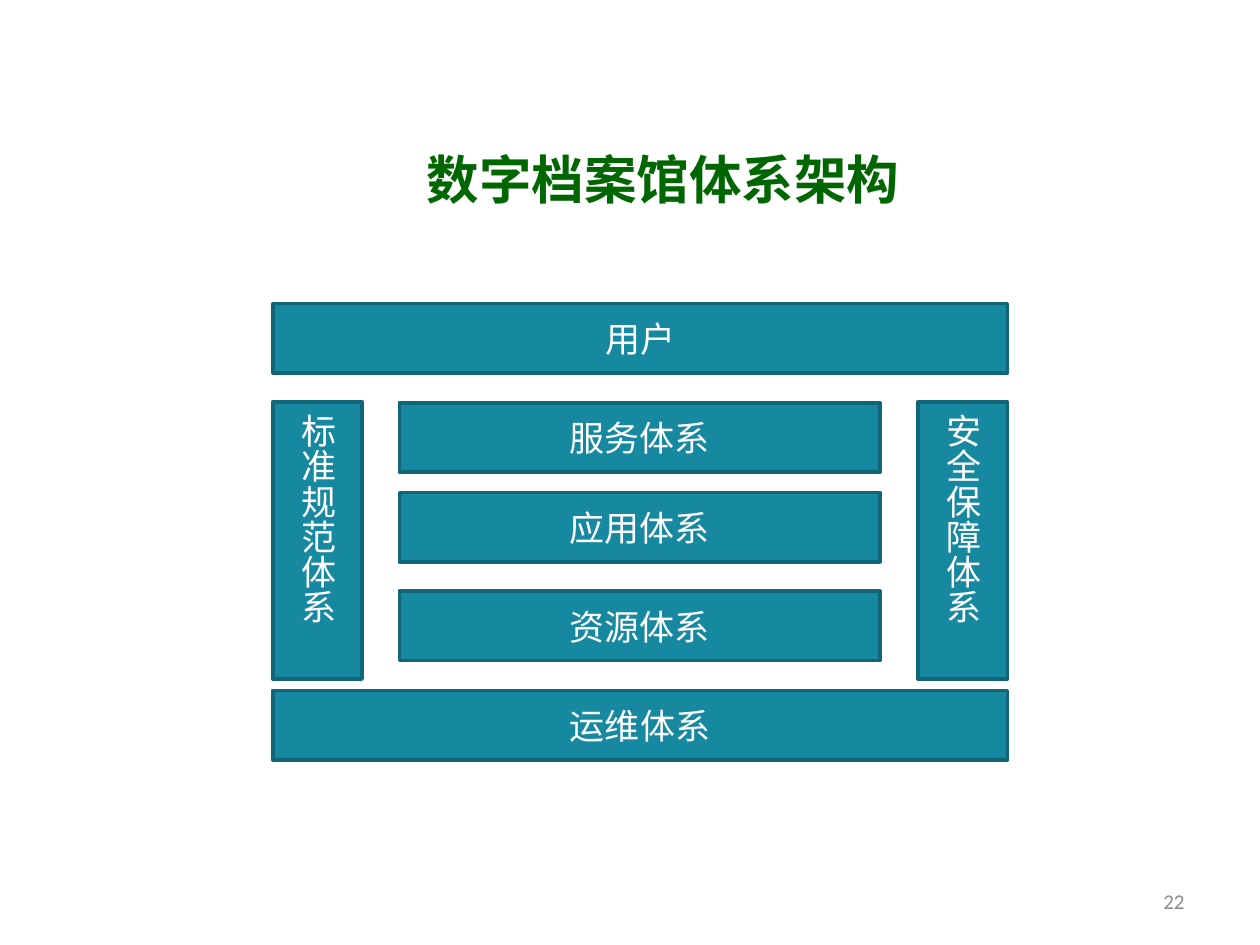
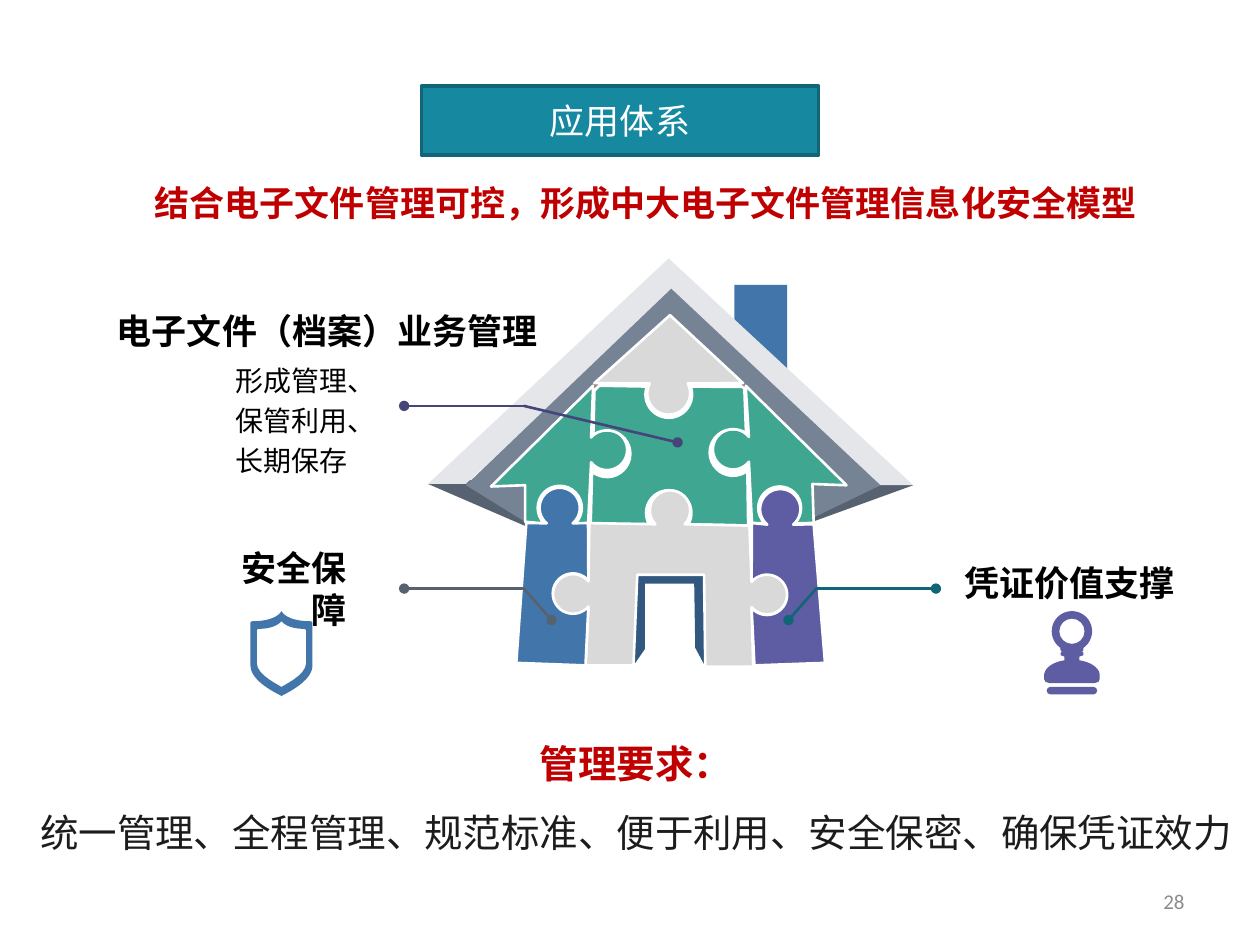
from math import ceil, cos, radians, sin, tan

from lxml import etree
from pptx import Presentation
from pptx.dml.color import RGBColor
from pptx.enum.shapes import MSO_CONNECTOR, MSO_SHAPE
from pptx.enum.text import MSO_ANCHOR, PP_ALIGN
from pptx.oxml.ns import qn
from pptx.util import Cm, Pt

RECTANGLE = MSO_SHAPE.RECTANGLE
STRAIGHT = MSO_CONNECTOR.STRAIGHT
TOP, MIDDLE = MSO_ANCHOR.TOP, MSO_ANCHOR.MIDDLE
LEFT, CENTER, RIGHT = PP_ALIGN.LEFT, PP_ALIGN.CENTER, PP_ALIGN.RIGHT
JUSTIFY = PP_ALIGN.JUSTIFY

TEAL = RGBColor(0x16, 0x89, 0xA0)
DARK_TEAL = RGBColor(0x10, 0x65, 0x76)
TITLE_GREEN = RGBColor(0x00, 0x66, 0x00)
RED = RGBColor(0xC0, 0x00, 0x00)
BLACK = RGBColor(0x00, 0x00, 0x00)
INK = RGBColor(0x1C, 0x1C, 0x1C)
WHITE = RGBColor(0xFF, 0xFF, 0xFF)
PAGE_GREY = RGBColor(0x8C, 0x8C, 0x8C)
BLUE = RGBColor(0x42, 0x76, 0xAA)
DOOR_BLUE = RGBColor(0x32, 0x58, 0x7F)
GREEN = RGBColor(0x3F, 0xA6, 0x92)
PURPLE = RGBColor(0x5E, 0x5C, 0xA2)
INDIGO = RGBColor(0x46, 0x45, 0x7A)
SLATE = RGBColor(0x57, 0x62, 0x71)
EAVES_GREY = RGBColor(0x76, 0x83, 0x95)
ROOF_GREY = RGBColor(0xE4, 0xE6, 0xEA)
PIECE_GREY = RGBColor(0xD9, 0xD9, 0xD9)
BROWN = RGBColor(0x9E, 0x85, 0x7F)
DARK_CHIP = RGBColor(0x19, 0x13, 0x13)
BLUE_CHIP = RGBColor(0x1F, 0x40, 0xB5)

LATIN = "Calibri"
CHINESE = "Noto Sans CJK SC"
BAR_HEIGHT = 1.4
HOUSE_COLUMNS = 385


def add_span(para, text, size, color, bold=False, font=LATIN):
    span = para.add_run()
    span.text = text
    span.font.size = Pt(size)
    span.font.bold = bold
    span.font.color.rgb = color
    span.font.name = font
    east_asian = etree.SubElement(span.font._element, qn("a:ea"))
    east_asian.set("typeface", CHINESE)


def write(shape, text, size, color, align=LEFT, bold=False, font=LATIN,
          anchor=MIDDLE, inset=None, spacing=None):
    frame = shape.text_frame
    frame.word_wrap = True
    frame.vertical_anchor = anchor
    if inset is not None:
        frame.margin_left = frame.margin_right = Cm(inset)
        frame.margin_top = frame.margin_bottom = Cm(inset)
    para = frame.paragraphs[0]
    para.alignment = align
    para.line_spacing = spacing
    add_span(para, text, size, color, bold, font)
    return frame


def add_text(page, box, *content, **style):
    return write(page.shapes.add_textbox(*map(Cm, box)), *content, **style)


def paint(shape, color, edge=None, weight=1.5):
    shape.shadow.inherit = False
    if color is None:
        shape.fill.background()
    else:
        shape.fill.solid()
        shape.fill.fore_color.rgb = color
    if edge is None:
        shape.line.fill.background()
    else:
        shape.line.color.rgb = edge
        shape.line.width = Pt(weight)


def add_block(page, box, text, vertical=False):
    block = page.shapes.add_shape(RECTANGLE, *map(Cm, box))
    paint(block, TEAL, DARK_TEAL, 2)
    frame = write(block, text, 20, WHITE, CENTER)
    if vertical:
        frame._txBody.bodyPr.set("vert", "eaVert")


def add_page_number(page, number):
    add_text(page, (18.21, 17.65, 5.92, 1.02), number, 12, PAGE_GREY, RIGHT)


def control(x, y):
    return x, y, True


def arc(x, y, radius, start, end):
    count = ceil(abs(end - start) / 90)
    step = radians(end - start) / count
    reach = 4 / 3 * tan(step / 4)
    points = [(x + radius * cos(radians(start)), y + radius * sin(radians(start)))]
    for index in range(count):
        a = radians(start) + index * step
        b = a + step
        points += [
            control(x + radius * (cos(a) - reach * sin(a)),
                    y + radius * (sin(a) + reach * cos(a))),
            control(x + radius * (cos(b) + reach * sin(b)),
                    y + radius * (sin(b) - reach * cos(b))),
            (x + radius * cos(b), y + radius * sin(b)),
        ]
    return points


def mirrored(half, width):
    return half + [(width - point[0], *point[1:]) for point in reversed(half[:-1])]


def bend_controls(outline, points):
    track = outline._element.spPr.find(".//" + qn("a:path"))
    nodes = [node for node in track if node.tag != qn("a:close")]
    cubic = None
    for node, point in zip(nodes, points):
        is_control = len(point) == 3
        if is_control and cubic is None:
            cubic = etree.Element(qn("a:cubicBezTo"))
            node.addprevious(cubic)
        if cubic is not None:
            cubic.append(node[0])
            track.remove(node)
            if not is_control:
                cubic = None


def add_outline(page, grid, contours, color, edge=None):
    left, top, unit = grid
    placed = [[(left + point[0] * unit, top + point[1] * unit) for point in contour]
              for contour in contours]
    builder = page.shapes.build_freeform(*placed[0][0])
    builder.add_line_segments(placed[0][1:], close=True)
    for contour in placed[1:]:
        builder.move_to(*contour[0])
        builder.add_line_segments(contour[1:], close=True)
    outline = builder.convert_to_shape()
    bend_controls(outline, [point for contour in contours for point in contour])
    paint(outline, color, edge)
    return outline


def add_panel(page, grid, x, y, width, height, color):
    left, top, unit = grid
    box = left + x * unit, top + y * unit, width * unit, height * unit
    paint(page.shapes.add_shape(RECTANGLE, *map(round, box)), color)


def add_line(page, grid, start, end, color, dot):
    left, top, unit = grid
    ends = [round(origin + value * unit) for point in (start, end)
            for origin, value in zip((left, top), point)]
    line = page.shapes.add_connector(STRAIGHT, *ends)
    line.line.color.rgb = color
    line.line.width = Pt(1.5)
    etree.SubElement(line.line._get_or_add_ln(), qn("a:" + dot)).set("type", "oval")
    etree.SubElement(line._element.spPr, qn("a:effectLst"))


def add_callout(page, grid, inside, bend, outside, color):
    add_line(page, grid, inside, bend, color, "headEnd")
    add_line(page, grid, bend, outside, color, "tailEnd")


def add_house(page, left, top, width):
    grid = Cm(left), Cm(top), Cm(width) / HOUSE_COLUMNS
    shell = [
        (SLATE, [(0, 179), (81, 214), (81, 205), (32, 175)]),
        (SLATE, [(356, 180), (385, 180), (305, 209), (306, 200)]),
        (ROOF_GREY, [(356, 180), (385, 180), (191, 0), (0, 179), (30, 179), (193, 27)]),
        (EAVES_GREY, [(77, 209), (30, 180), (193, 24), (359, 180), (303, 207),
                      (305, 180), (332, 180), (192, 45), (52, 180), (79, 180)]),
        (DARK_CHIP, [(257, 211), (257, 210), (256, 210)]),
        (BLUE_CHIP, [(127, 212), (127, 211), (126.5, 211)]),
    ]
    right_wall = ([(252, 101)] + arc(242, 151.5, 16, 322, 38)
                  + [(257, 210)] + arc(279, 198, 17, 135, 405)
                  + [(306, 210), (305, 179), (332, 180)])
    left_wall = ([(131, 101), (50, 181), (77, 180), (77, 209)]
                 + arc(104.5, 198, 17.5, 135, 405) + [(127, 211)]
                 + arc(142, 152, 16, 142, -142))
    centre = ([(136, 101), (132, 105)] + arc(142, 155, 18.5, -126, 130)
              + [(129, 211)] + arc(191, 202, 18, 150, 390)
              + [(254, 212)] + arc(242, 154, 18.5, 52, 304)
              + [(251, 103), (249, 102)] + arc(191, 108, 18.5, -20, 200))
    doorway = ([(255, 212)] + arc(192, 200, 16, 43, -223)
               + [(128, 210)] + arc(115, 266.5, 16, -40, -320)
               + [(125, 323), (163, 323), (166, 251), (219, 251), (220, 324),
                  (258, 324)] + arc(269, 266.5, 16, 140, -140))
    right_pillar = ([(315, 321), (306, 211)] + arc(279.5, 199, 16, 50, -230)
                    + [(257, 210)] + arc(269, 267, 16, -140, 140) + [(259, 323)])
    left_pillar = ([(70, 321), (78, 210)] + arc(104.5, 198, 16, 130, 410)
                   + [(127, 210)] + arc(115, 266, 16, -40, -320) + [(125, 323)])
    gable = [(250, 99), (192, 45), (132, 99)] + arc(191, 107, 17, 207, -27)
    gable_corners = [[(249, 100), (251, 102), (251, 100)],
                     [(132, 100), (132, 103), (135, 100)]]
    door_sides = [[(212, 309), (220, 324), (219, 246), (211, 248)],
                  [(163, 323), (172, 310), (172, 249), (163, 248)]]

    add_panel(page, grid, 243, 21, 42, 70, BLUE)
    for color, contour in shell:
        add_outline(page, grid, [contour], color)
    for piece in (right_wall, left_wall, centre):
        add_outline(page, grid, [piece], GREEN, WHITE)
    add_outline(page, grid, gable_corners, BROWN)
    for contour in door_sides:
        add_outline(page, grid, [contour], DOOR_BLUE)
    add_panel(page, grid, 165, 249, 56, 9, DOOR_BLUE)
    for color, piece in ((PIECE_GREY, doorway), (PURPLE, right_pillar),
                         (BLUE, left_pillar)):
        add_outline(page, grid, [piece], color, WHITE)
    add_callout(page, grid, (198, 146), (76, 117), (-19, 117), INDIGO)
    add_callout(page, grid, (286, 287), (308, 262), (403, 262), DARK_TEAL)
    add_callout(page, grid, (98, 287), (76, 262), (-19, 262), SLATE)
    add_house_labels(page)
    add_outline(page, grid, [gable], PIECE_GREY, WHITE)


def add_shield(page, left, top, width):
    columns = 49
    outer = [(24.5, 0), control(25, 1), control(29, 8), (48, 8), (49, 9), (49, 43),
             control(49, 56), control(26, 66), (24.5, 67)]
    inner = [(24.5, 8), control(25, 8), control(28, 14), (43, 14), (44, 15), (44, 41),
             control(44, 51), control(25, 59), (24.5, 60)]
    grid = Cm(left), Cm(top), Cm(width) / columns
    add_outline(page, grid, [mirrored(half, columns) for half in (outer, inner)], BLUE)


def add_stamp(page, left, top, width):
    columns = 44
    handle = (arc(22, 16, 16, -90, 55) + [(31, 31), (30, 32), (31, 33), (31, 35),
              (28, 36), (28, 39), control(41, 41), control(44, 48), (44, 50),
              (44, 54), (43, 56), (40, 57), (22, 57)])
    foot = arc(5, 63, 3, 90, 270) + arc(39, 63, 3, -90, 90)
    contours = [foot, arc(22, 16, 10, 0, 360), mirrored(handle, columns)]
    add_outline(page, (Cm(left), Cm(top), Cm(width) / columns), contours, PURPLE)


def add_architecture(page, left, top, width):
    side_width, side_height, side_top = 1.8, 5.59, top + 1.98
    core_left, core_width = left + 2.55, 9.69
    for offset, name in ((2, "服务体系"), (3.81, "应用体系"), (5.8, "资源体系")):
        add_block(page, (core_left, top + offset, core_width, BAR_HEIGHT), name)
    for offset, name in ((0, "用户"), (7.8, "运维体系")):
        add_block(page, (left, top + offset, width, BAR_HEIGHT), name)
    for side_left, name in ((left, "标准规范体系"),
                            (left + width - side_width, "安全保障体系")):
        add_block(page, (side_left, side_top, side_width, side_height), name, True)


def add_house_labels(page):
    heading = {"bold": True, "font": CHINESE, "inset": 0}
    add_text(page, (2.23, 6.24, 8.61, 0.86), "电子文件（档案）业务管理", 20, BLACK,
             RIGHT, **heading)
    add_text(page, (4.7, 7.19, 2.36, 2.46), "形成管理、保管利用、长期保存", 16, BLACK,
             CENTER, anchor=TOP, inset=0, spacing=1.2)
    area = [(0, 0), (2.14, 0), (2.14, 2.87), (0, 2.87)]
    safety = add_outline(page, (Cm(4.84), Cm(10.42), Cm(1)), [area], None)
    write(safety, "安全保障", 20, BLACK, RIGHT, **heading)
    add_text(page, (19.44, 11.31, 4.3, 0.86), "凭证价值支撑", 20, BLACK, **heading)


def add_requirements(page, box):
    frame = add_text(page, box, "管理要求：", 22, RED, CENTER, True, CHINESE,
                     TOP, spacing=1.5)
    para = frame.add_paragraph()
    para.alignment = CENTER
    para.line_spacing = 1.5
    add_span(para, "统一管理、全程管理、规范标准、便于利用、安全保密、确保凭证效力",
             22, INK, font=CHINESE)


def build_architecture_page(deck):
    page = deck.slides.add_slide(deck.slide_layouts[6])
    add_text(page, (8.22, 2.95, 10.29, 1.3), "数字档案馆体系架构", 30, TITLE_GREEN,
             CENTER, True, CHINESE)
    add_architecture(page, 5.5, 6.12, 14.81)
    add_page_number(page, "22")


def build_application_page(deck):
    page = deck.slides.add_slide(deck.slide_layouts[6])
    add_house(page, 8.63, 5.21, 9.78)
    summary = add_text(page, (1.72, 3.53, 21.79, 1.8),
                       "结合电子文件管理可控，形成中大电子文件管理信息化安全模型",
                       20, RED, JUSTIFY, True, CHINESE, TOP)
    summary.margin_left = Cm(1.4)
    add_requirements(page, (0.47, 14.33, 24.7, 3.07))
    add_shield(page, 5.05, 12.32, 1.25)
    add_stamp(page, 21.05, 12.32, 1.12)
    add_block(page, (8.5, 1.73, 8, BAR_HEIGHT), "应用体系")
    add_page_number(page, "28")


def main():
    deck = Presentation()
    deck.slide_width, deck.slide_height = Cm(25.4), Cm(19.05)
    build_architecture_page(deck)
    build_application_page(deck)
    deck.save("out.pptx")


if __name__ == "__main__":
    main()
